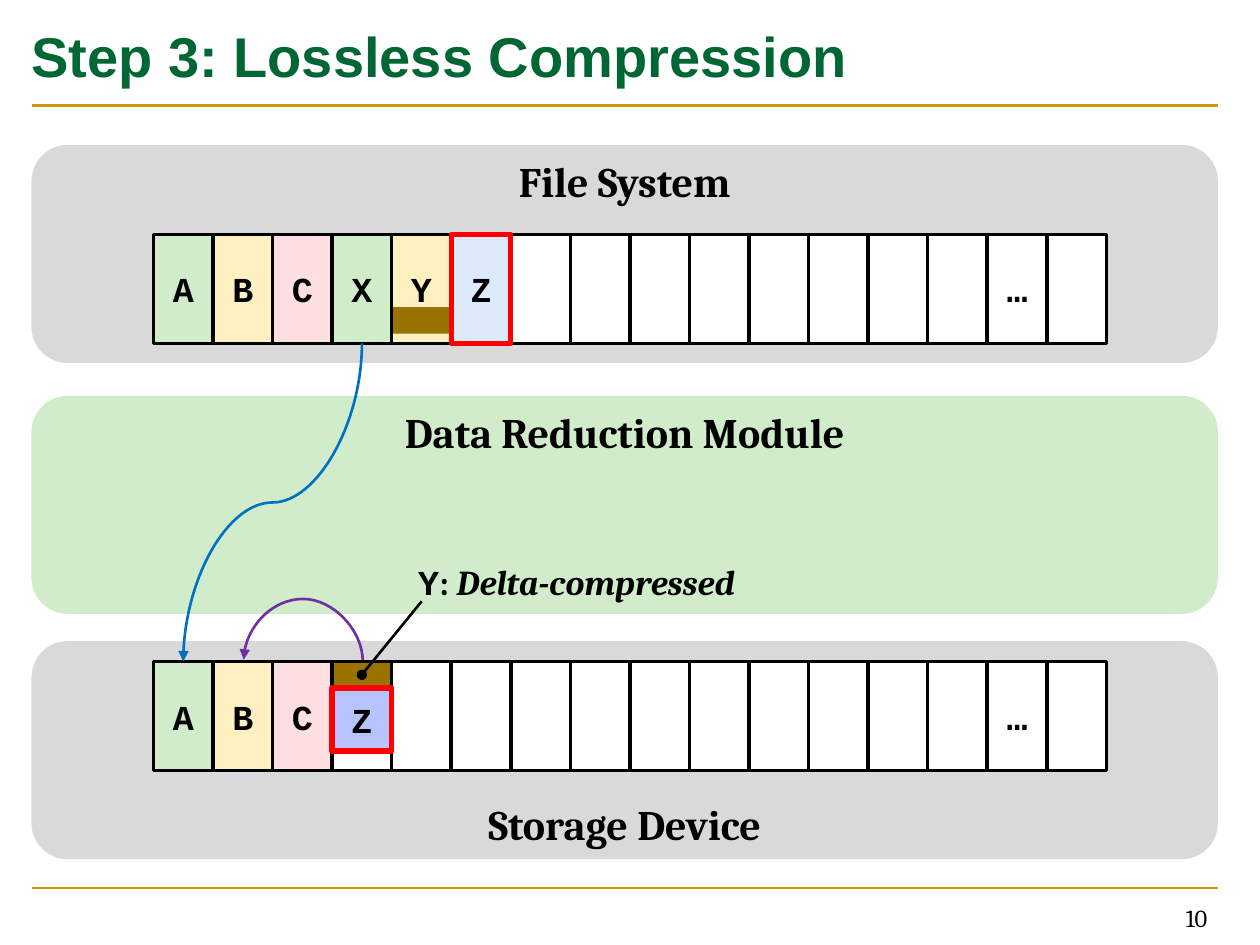
import pptx
import pptx.dml.color
import pptx.enum.shapes
import pptx.enum.text
import pptx.oxml.ns
import pptx.oxml.xmlchemy
import pptx.util
from dataclasses import dataclass, field

Pt = pptx.util.Pt
RGB = pptx.dml.color.RGBColor.from_string
SHAPE = pptx.enum.shapes.MSO_SHAPE
CONNECTOR = pptx.enum.shapes.MSO_CONNECTOR
ALIGN = pptx.enum.text.PP_ALIGN
ANCHOR = pptx.enum.text.MSO_ANCHOR


@dataclass
class Theme:
    """Colours, fonts and type sizes of the page."""
    black: str = "000000"
    white: str = "FFFFFF"
    gold: str = "CC9900"
    grey: str = "D9D9D9"
    green: str = "D0ECCB"
    title: str = "006633"
    delta: str = "997300"
    red: str = "FF0000"
    blue: str = "0070C0"
    purple: str = "7030A0"
    fresh_z: str = "DDEAFC"
    packed_z: str = "B7C3FC"
    blocks: dict = field(default_factory=lambda: {
        "A": "D0ECCB", "B": "FFF0C2", "C": "FFDFE2", "X": "D0ECCB", "Y": "FFF0C2"})
    title_font: dict = field(default_factory=lambda: dict(name="Arial", size=Pt(32), bold=True))
    panel_font: dict = field(default_factory=lambda: dict(name="Cambria", size=Pt(24), bold=True))
    block_font: dict = field(default_factory=lambda: dict(name="Courier New", size=Pt(20), bold=True))
    note_font: dict = field(default_factory=lambda: dict(name="Cambria", size=Pt(20), bold=True))
    number_font: dict = field(default_factory=lambda: dict(name="Cambria", size=Pt(14)))


def set_all(target, values):
    for name, value in values.items():
        setattr(target, name, value)


def add_element(parent, tag, **attributes):
    element = pptx.oxml.xmlchemy.OxmlElement(tag)
    for name, value in attributes.items():
        element.set(name, value)
    parent.append(element)


class Painter:
    def __init__(self, page, theme):
        self.page = page
        self.theme = theme

    def box(self, left, top, width, height, fill, line=None, weight=2, kind=SHAPE.RECTANGLE):
        box = self.page.shapes.add_shape(kind, Pt(left), Pt(top), Pt(width), Pt(height))
        box.shadow.inherit = False
        box.fill.solid()
        box.fill.fore_color.rgb = RGB(fill)
        if line:
            box.line.color.rgb = RGB(line)
            box.line.width = Pt(weight)
        else:
            box.line.fill.background()
        return box

    def label(self, box, spans, align=ALIGN.CENTER, anchor=ANCHOR.MIDDLE, color=None, margin=0):
        """Fill a box with one paragraph of (text, font values) spans."""
        set_all(box.text_frame, dict(
            word_wrap=True, vertical_anchor=anchor, margin_left=Pt(margin),
            margin_right=Pt(margin), margin_top=0, margin_bottom=0))
        para = box.text_frame.paragraphs[0]
        para.alignment = align
        for text, font in spans:
            span = para.add_run()
            span.text = text
            set_all(span.font, font)
            span.font.color.rgb = RGB(color or self.theme.black)

    def text(self, left, top, width, height, text, font, **layout):
        box = self.page.shapes.add_textbox(Pt(left), Pt(top), Pt(width), Pt(height))
        self.label(box, [(text, font)], **layout)

    def panel(self, top, title, fill, anchor=ANCHOR.TOP):
        box = self.box(EDGE, top, SPAN, PANEL_HEIGHT, fill, kind=SHAPE.ROUNDED_RECTANGLE)
        self.label(box, [(title, self.theme.panel_font)], anchor=anchor)

    def block(self, column, top, letter="", fill=None, line=None, weight=2, height=None):
        box = self.box(column_left(column), top, CELL_WIDTH, height or CELL_HEIGHT,
                       fill or self.theme.blocks.get(letter, self.theme.white),
                       line or self.theme.black, weight)
        if letter:
            self.label(box, [(letter, self.theme.block_font)])

    def row(self, top, letters):
        labels = dict(enumerate(letters))
        labels[DOTS_COLUMN] = "…"
        for column in range(COLUMNS):
            self.block(column, top, labels.get(column, ""))

    def line(self, start, end, color, kind=CONNECTOR.STRAIGHT, head=None, tail=None):
        line = self.page.shapes.add_connector(kind, *map(Pt, start + end))
        line.line.color.rgb = RGB(color)
        line.line.width = Pt(1.5)
        properties = line._element.spPr
        for tag, arrow in (("a:headEnd", head), ("a:tailEnd", tail)):
            if arrow:
                add_element(properties.find(pptx.oxml.ns.qn("a:ln")), tag, type=arrow)
        add_element(properties, "a:effectLst")
        return line

    def curve(self, start, end, color, turn, flip=False, bend=0.5):
        """Vertical curve: a horizontal connector turned about its centre."""
        length, breadth = abs(end[1] - start[1]), abs(end[0] - start[0])
        line = self.line(start, end, color, CONNECTOR.CURVE, tail="triangle")
        set_all(line, dict(
            left=Pt((start[0] + end[0] - length) / 2), top=Pt((start[1] + end[1] - breadth) / 2),
            width=Pt(length), height=Pt(breadth)))
        frame = line._element.spPr.find(pptx.oxml.ns.qn("a:xfrm"))
        for name in ("flipH", "flipV"):
            frame.attrib.pop(name, None)
        frame.set("rot", str(turn * 60000))
        if flip:
            frame.set("flipV", "1")
        guides = next(line._element.iter(pptx.oxml.ns.qn("a:avLst")))
        add_element(guides, "a:gd", name="adj1", fmla=f"val {round(bend * 100000)}")


# Page grid, in points
EDGE, SPAN, PANEL_HEIGHT = 18, 678, 124.6
ROW_LEFT, CELL_WIDTH, CELL_HEIGHT = 87.7, 34.03, 62.4
COLUMNS, DOTS_COLUMN = 16, 14
FILE_TOP, STORE_TOP = 133.9, 378
DELTA_HEIGHT = 15.2


def column_left(column):
    return ROW_LEFT + column * CELL_WIDTH


def column_middle(column):
    return column_left(column) + CELL_WIDTH / 2


def main():
    deck = pptx.Presentation()
    set_all(deck, dict(slide_width=Pt(720), slide_height=Pt(540)))
    theme = Theme()
    painter = Painter(deck.slides.add_slide(deck.slide_layouts[6]), theme)

    # Title, rules and page number
    for height in (60.2, 507.4):
        painter.line((EDGE, height), (EDGE + SPAN, height), theme.gold)
    painter.text(EDGE, 3, SPAN, 57, "Step 3: Lossless Compression", theme.title_font,
                 align=ALIGN.LEFT, color=theme.title)
    painter.text(529, 512, 168, 24.5, "10", theme.number_font, align=ALIGN.RIGHT, margin=7.2)

    # Panels
    painter.panel(82.8, "File System", theme.grey)
    painter.panel(226.2, "Data Reduction Module", theme.green)
    painter.panel(366.4, "Storage Device", theme.grey, ANCHOR.BOTTOM)

    # File system blocks, with the repeated part of Y
    painter.row(FILE_TOP, "ABCXY")
    painter.box(column_left(4) + 0.8, 175.5, 32.4, DELTA_HEIGHT, theme.delta)
    painter.block(5, FILE_TOP, "Z", theme.fresh_z, theme.red, 3)

    # Stored blocks and references to them
    painter.row(STORE_TOP, "ABC")
    painter.curve((column_middle(3), FILE_TOP + CELL_HEIGHT), (column_middle(0), STORE_TOP),
                  theme.blue, turn=90)
    painter.curve((column_middle(3) + 0.5, STORE_TOP), (column_middle(1) + 0.5, STORE_TOP - 1),
                  theme.purple, turn=270, flip=True, bend=36)
    painter.block(3, STORE_TOP, fill=theme.delta, height=DELTA_HEIGHT)

    # Delta note and its pointer
    note = painter.box(230.4, 320.4, 198, 25.2, theme.green)
    painter.label(note, [("Y", theme.block_font), (": ", theme.note_font),
                         ("Delta-compressed", theme.note_font | {"italic": True})],
                  anchor=ANCHOR.TOP)
    painter.line((column_middle(3), STORE_TOP + DELTA_HEIGHT / 2), (241, 343.6),
                 theme.black, head="oval")

    # Compressed Z
    painter.block(3, STORE_TOP + DELTA_HEIGHT, "Z", theme.packed_z, theme.red, 3, height=36)

    deck.save("out.pptx")


if __name__ == "__main__":
    main()
